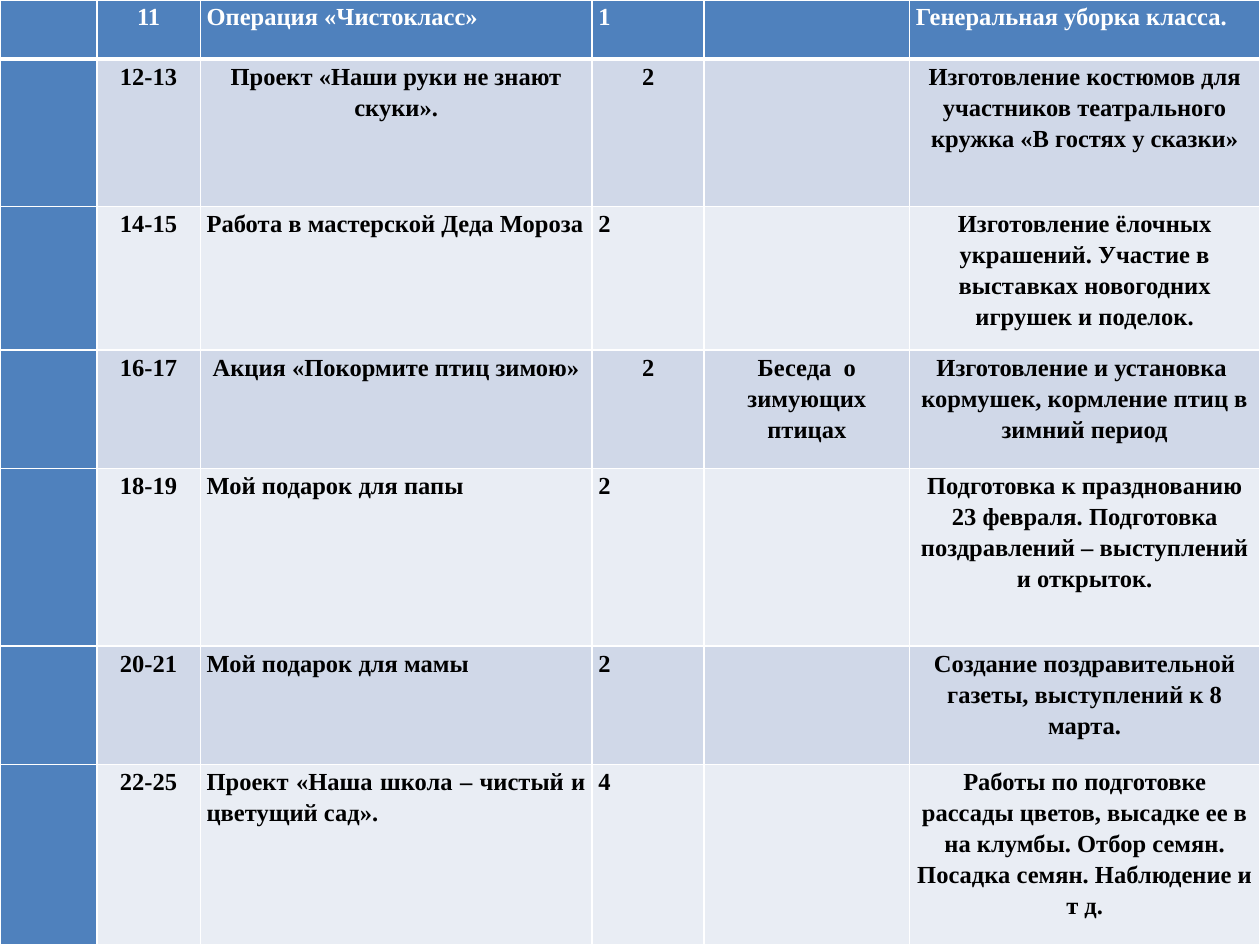
from dataclasses import dataclass

from lxml.etree import SubElement
from pptx import Presentation
from pptx.dml.color import RGBColor
from pptx.enum.text import PP_ALIGN as ALIGN
from pptx.oxml.ns import qn
from pptx.util import Inches, Pt


@dataclass(frozen=True)
class Theme:
    font: str = "Times New Roman"
    size: int = 14
    spacing: float = 1.15
    accent: str = "4F81BD"
    bands: tuple = ("E9EDF4", "D0D8E8")
    light: str = "FFFFFF"
    dark: str = "000000"
    thin: int = 1
    thick: int = 3


THEME = Theme()

COL_WIDTHS = [0.77, 0.82, 3.11, 0.89, 1.63, 2.78]
ROW_HEIGHTS = [0.47, 1.17, 1.14, 0.94, 1.41, 0.94, 1.43]
TOPIC, HOURS, PRACTICE = 2, 3, 5

# Columns: blank, lesson numbers, topic, hours, theory, practice
LESSONS = [
    ("", "11", "Операция «Чистокласс»", "1", "", "Генеральная уборка класса."),
    ("", "12-13", "Проект «Наши руки не знают скуки».", "2", "",
     "Изготовление костюмов для участников театрального кружка «В гостях у сказки»"),
    ("", "14-15", "Работа в мастерской Деда Мороза", "2", "",
     "Изготовление ёлочных украшений. Участие в выставках новогодних игрушек и поделок."),
    ("", "16-17", "Акция «Покормите птиц зимою»", "2", "Беседа  о зимующих птицах",
     "Изготовление и установка  кормушек, кормление птиц в зимний период"),
    ("", "18-19", "Мой подарок для папы", "2", "",
     "Подготовка к празднованию 23 февраля. Подготовка поздравлений – выступлений и открыток."),
    ("", "20-21", "Мой подарок для мамы", "2", "",
     "Создание поздравительной газеты, выступлений к 8 марта."),
    ("", "22-25", "Проект «Наша школа – чистый и цветущий сад».", "4", "",
     "Работы по подготовке рассады цветов, высадке ее в на клумбы. Отбор семян. "
     "Посадка семян. Наблюдение и т д."),
]
CENTERED_ROWS = (1, 3)


def cell_alignment(row, col):
    if col in (TOPIC, HOURS) and row not in CENTERED_ROWS:
        return ALIGN.JUSTIFY
    if row == 0 and col == PRACTICE:
        return ALIGN.LEFT
    return ALIGN.CENTER


def set_borders(cell, row):
    """Draw thin white borders, with a thick rule under the first row."""
    widths = {
        "a:lnL": THEME.thin,
        "a:lnR": THEME.thin,
        "a:lnT": THEME.thick if row == 1 else THEME.thin,
        "a:lnB": THEME.thick if row == 0 else THEME.thin,
    }
    tc_pr = cell._tc.get_or_add_tcPr()
    for tag, width in widths.items():
        line = SubElement(tc_pr, qn(tag), w=str(Pt(width)))
        fill = SubElement(line, qn("a:solidFill"))
        SubElement(fill, qn("a:srgbClr"), val=THEME.light)


def set_fill(cell, row, col):
    color = THEME.accent if row == 0 or col == 0 else THEME.bands[row % 2]
    cell.fill.solid()
    cell.fill.fore_color.rgb = RGBColor.from_string(color)


def set_text(cell, text, row, col):
    cell.margin_left = cell.margin_right = Inches(0.05)
    cell.margin_top = cell.margin_bottom = 0
    cell.text_frame.text = text
    p = cell.text_frame.paragraphs[0]
    p.alignment = cell_alignment(row, col)
    p.line_spacing = THEME.spacing
    font = p.runs[0].font
    font.name = THEME.font
    font.size = Pt(THEME.size)
    font.bold = True
    font.color.rgb = RGBColor.from_string(THEME.dark if row else THEME.light)


def add_lesson_table(s, prs):
    frame = s.shapes.add_table(len(LESSONS), len(COL_WIDTHS), 0, 0,
                               prs.slide_width, prs.slide_height)
    table = frame.table
    table.first_col = True
    for column, width in zip(table.columns, COL_WIDTHS):
        column.width = Inches(width)
    for table_row, height in zip(table.rows, ROW_HEIGHTS):
        table_row.height = Inches(height)
    for row, lesson in enumerate(LESSONS):
        for col, text in enumerate(lesson):
            cell = table.cell(row, col)
            set_borders(cell, row)
            set_fill(cell, row, col)
            if text:
                set_text(cell, text, row, col)


def main():
    prs = Presentation()
    prs.slide_width, prs.slide_height = Inches(10), Inches(7.5)
    s = prs.slides.add_slide(prs.slide_layouts[6])

    # Lesson plan fills the whole slide
    add_lesson_table(s, prs)
    prs.save("out.pptx")


if __name__ == "__main__":
    main()
